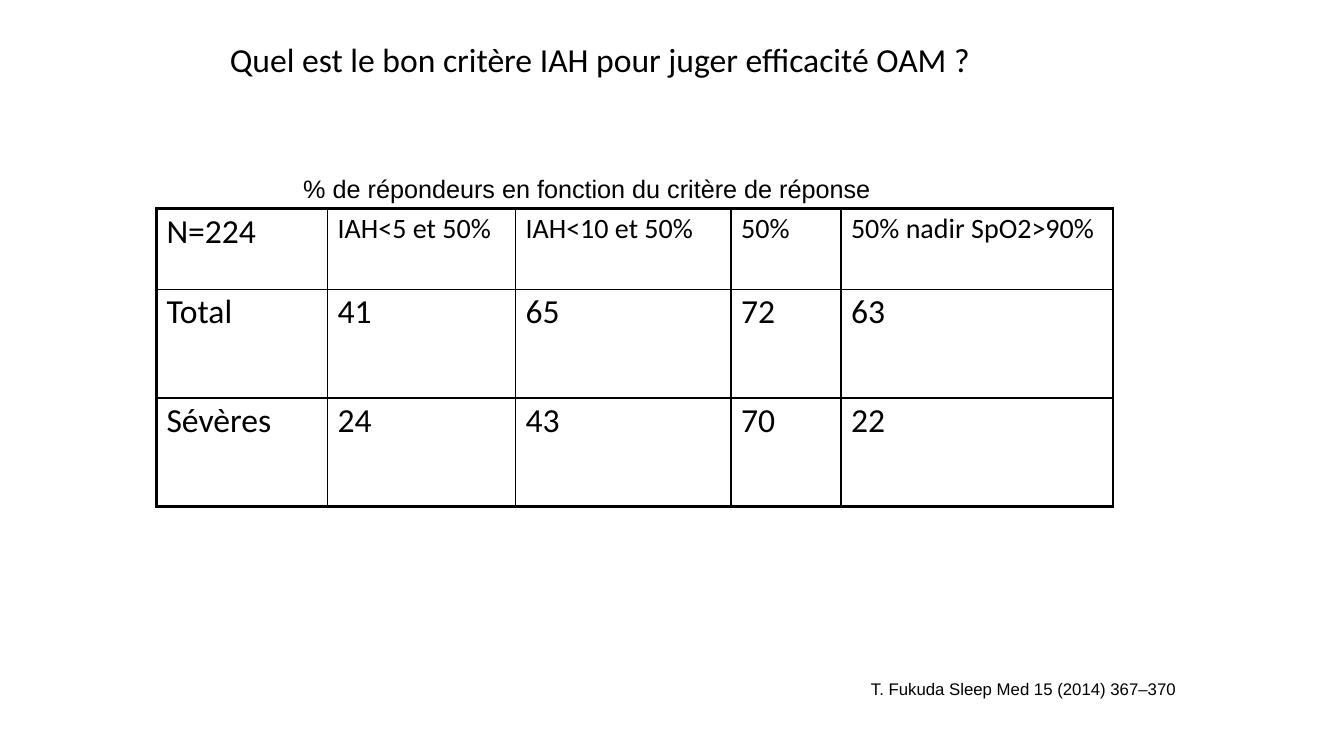
from lxml import etree
from pptx import Presentation
from pptx.dml.color import RGBColor
from pptx.enum.text import MSO_ANCHOR, MSO_AUTO_SIZE, PP_ALIGN
from pptx.oxml.ns import qn
from pptx.util import Pt

BLACK = RGBColor(0x00, 0x00, 0x00)
LEFT = PP_ALIGN.LEFT
TOP = MSO_ANCHOR.TOP
NO_AUTOFIT = MSO_AUTO_SIZE.NONE
THIN, THICK = 1, 2.25
TITLE_ONLY = 5


def write_text(frame, text, font_name, size, **paragraph_format):
    frame.text = text
    paragraph = frame.paragraphs[0]
    paragraph.alignment = LEFT
    for name, value in paragraph_format.items():
        setattr(paragraph, name, value)
    font = paragraph.runs[0].font
    font.name = font_name
    font.size = Pt(size)
    font.color.rgb = BLACK


def add_border(cell, side, width):
    """Draw one side of a cell: L, R, T or B, in that order."""
    properties = cell._tc.get_or_add_tcPr()
    line = etree.SubElement(properties, qn(f"a:ln{side}"), w=str(Pt(width)))
    fill = etree.SubElement(line, qn("a:solidFill"))
    etree.SubElement(fill, qn("a:srgbClr"), val=str(BLACK))


presentation = Presentation()
presentation.slide_width = Pt(960)
presentation.slide_height = Pt(540)
slide = presentation.slides.add_slide(presentation.slide_layouts[TITLE_ONLY])

# Title, caption and reference
title = slide.shapes.title
caption = slide.shapes.add_textbox(0, 0, 0, 0)
reference = slide.shapes.add_textbox(0, 0, 0, 0)
text_boxes = [
    (title, (157, 24.5, 605.5, 36), True, "Calibri", 24,
     "Quel est le bon critère IAH pour juger efficacité OAM ?"),
    (caption, (209.5, 120.5, 425.5, 29), True, "Arial", 18,
     "% de répondeurs en fonction du critère de réponse"),
    (reference, (615, 481.5, 233.5, 21.5), False, "Arial", 12,
     "T. Fukuda Sleep Med 15 (2014) 367–370"),
]
for shape, box, wrap, font_name, size, text in text_boxes:
    shape.left, shape.top, shape.width, shape.height = map(Pt, box)
    frame = shape.text_frame
    frame.word_wrap = wrap
    frame.auto_size = NO_AUTOFIT
    frame.vertical_anchor = TOP
    write_text(frame, text, font_name, size)

# Table of responders
responders = [
    ["N=224", "IAH<5 et 50%", "IAH<10 et 50%", "50%", "50% nadir SpO2>90%"],
    ["Total", "41", "65", "72", "63"],
    ["Sévères", "24", "43", "70", "22"],
]
column_widths = [122.25, 134.25, 154, 78.5, 194.25]
row_heights = [57.75, 77.5, 77.5]
last_row, last_column = len(row_heights) - 1, len(column_widths) - 1

table = slide.shapes.add_table(
    len(row_heights), len(column_widths), Pt(111.75), Pt(149),
    Pt(sum(column_widths)), Pt(sum(row_heights))).table
table.first_row = False
table.horz_banding = False
for column, width in zip(table.columns, column_widths):
    column.width = Pt(width)
for row, height in zip(table.rows, row_heights):
    row.height = Pt(height)

for row_index, values in enumerate(responders):
    for column_index, value in enumerate(values):
        cell = table.cell(row_index, column_index)
        is_criterion = row_index == 0 and column_index > 0
        write_text(cell.text_frame, value, "Calibri", 20 if is_criterion else 24,
                   line_spacing=0.9, space_before=Pt(10))
        outer_sides = {
            "L": column_index == 0,
            "R": column_index == last_column,
            "T": row_index == 0,
            "B": row_index == last_row,
        }
        for side, is_outer in outer_sides.items():
            add_border(cell, side, THICK if is_outer else THIN)
        cell.fill.background()

presentation.save("out.pptx")
